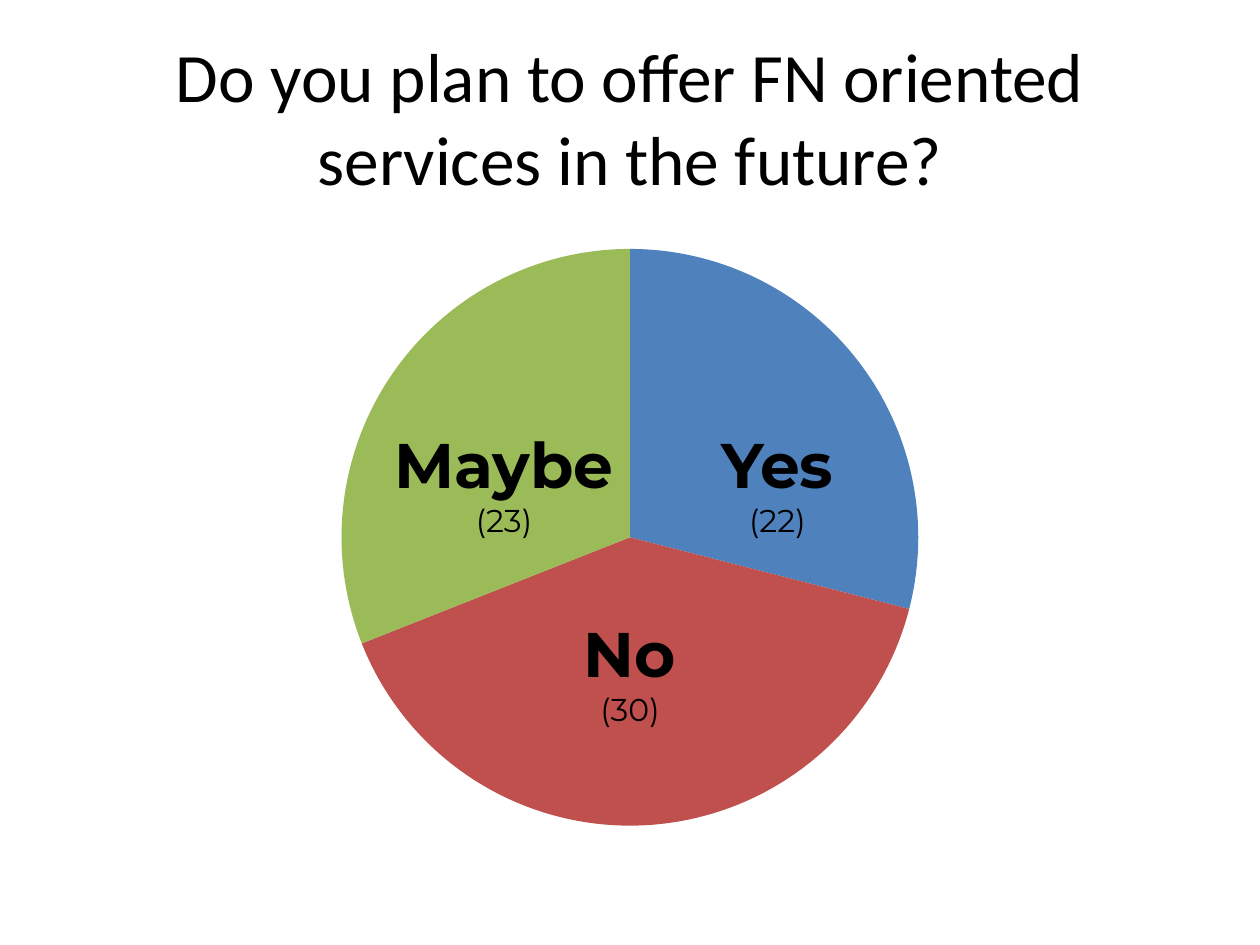
"""Build a survey slide: a pie chart of three answers with a label on each slice."""
from lxml import etree
from pptx import Presentation
from pptx.chart.data import CategoryChartData
from pptx.dml.color import RGBColor
from pptx.enum.chart import XL_CHART_TYPE
from pptx.enum.text import MSO_ANCHOR, PP_ALIGN
from pptx.oxml.ns import qn
from pptx.util import Inches, Pt

PIE = XL_CHART_TYPE.PIE
CENTER = PP_ALIGN.CENTER
MIDDLE = MSO_ANCHOR.MIDDLE
TOP = MSO_ANCHOR.TOP
BLACK = RGBColor(0x00, 0x00, 0x00)
BLUE = RGBColor(0x4F, 0x81, 0xBD)
RED = RGBColor(0xC0, 0x50, 0x4D)
GREEN = RGBColor(0x9B, 0xBB, 0x59)

WIDTH, HEIGHT = Inches(10), Inches(7.5)
MARGIN = WIDTH // 20
CONTENT_WIDTH = WIDTH - 2 * MARGIN
PIE_HEIGHT = Inches(4.87)
PIE_DIAMETER = Inches(4.59)

prs = Presentation()
prs.slide_width, prs.slide_height = WIDTH, HEIGHT
slide = prs.slides.add_slide(prs.slide_layouts[6])


def style_font(font, **values):
    font.color.rgb = BLACK
    for attribute, value in values.items():
        setattr(font, attribute, value)


def add_lines(left, top, width, height, anchor, lines):
    frame = slide.shapes.add_textbox(left, top, width, height).text_frame
    frame.word_wrap = True
    frame.vertical_anchor = anchor
    for index, (words, values) in enumerate(lines):
        line = frame.add_paragraph() if index else frame.paragraphs[0]
        line.alignment = CENTER
        run = line.add_run()
        run.text = words
        style_font(run.font, **values)


question = "Do you plan to offer FN oriented services in the future?"
add_lines(MARGIN, Inches(0.3), CONTENT_WIDTH, Inches(1.25), MIDDLE,
          [(question, {"name": "Calibri", "size": Pt(39.6)})])

shares = CategoryChartData()
shares.categories = ["1", "2", "3"]
shares.add_series("Series 1", (29, 40, 31))
pie = slide.shapes.add_chart(
    PIE, MARGIN, Inches(1.83), CONTENT_WIDTH, PIE_HEIGHT, shares).chart
pie.has_legend = False
pie.has_title = False
style_font(pie.font, name="Calibri", size=Pt(18))
pie.plots[0].vary_by_categories = False
for index, color in enumerate((BLUE, RED, GREEN)):
    pie_slice = pie.plots[0].series[0].points[index].format
    pie_slice.fill.solid()
    pie_slice.fill.fore_color.rgb = color
    pie_slice.line.fill.background()

plot_area = next(pie.element.iter(qn("c:plotArea")))
for automatic in plot_area.findall(qn("c:layout")):
    plot_area.remove(automatic)
layout = etree.Element(qn("c:layout"))
plot_area.insert(0, layout)
manual = etree.SubElement(layout, qn("c:manualLayout"))
across = round(PIE_DIAMETER / CONTENT_WIDTH, 2)
down = round(PIE_DIAMETER / PIE_HEIGHT, 2)
for tag, value in {
    "layoutTarget": "inner", "xMode": "edge", "yMode": "edge",
    "x": (1 - across) / 2, "y": (1 - down) / 2, "w": across, "h": down,
}.items():
    etree.SubElement(manual, qn(f"c:{tag}")).set("val", str(value))

for answer, count, left, top, width in (
    ("Yes", 22, 5.38, 3.33, 1.58),
    ("No", 30, 4.21, 4.83, 1.58),
    ("Maybe", 23, 3, 3.33, 2),
):
    add_lines(Inches(left), Inches(top), Inches(width), Inches(1.01), TOP, [
        (answer, {"name": "Montserrat", "size": Pt(36), "bold": True}),
        (f"({count})", {"name": "Montserrat", "size": Pt(18), "bold": False}),
    ])

prs.save("out.pptx")
